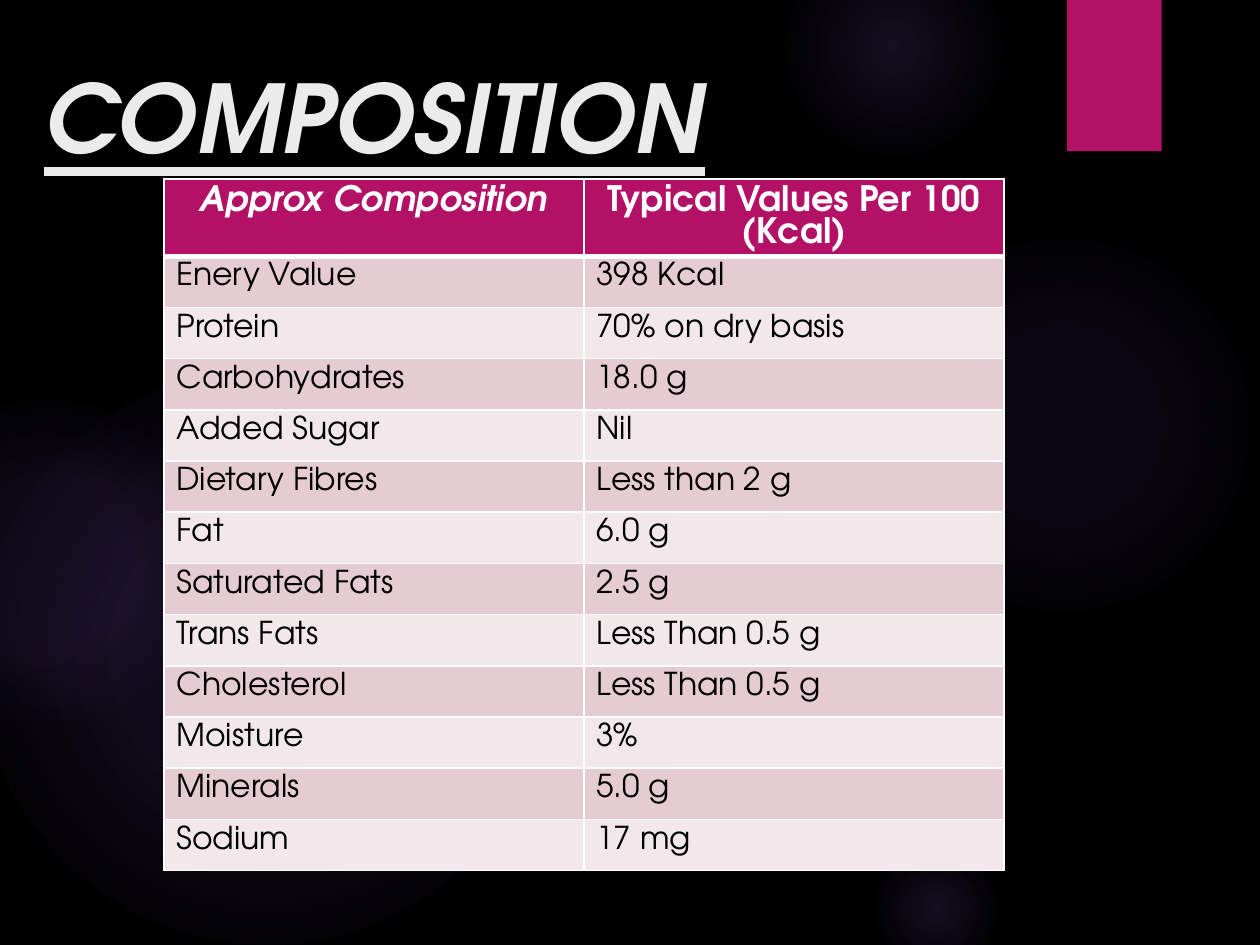
from dataclasses import dataclass

from lxml.etree import SubElement
from pptx import Presentation
from pptx.dml.color import RGBColor
from pptx.enum.shapes import MSO_SHAPE
from pptx.enum.text import MSO_ANCHOR, PP_ALIGN
from pptx.oxml import parse_xml
from pptx.oxml.ns import nsdecls, qn
from pptx.util import Inches, Pt


@dataclass(frozen=True)
class Theme:
    font: str = "TeX Gyre Adventor"
    back: str = "000000"
    glow: str = "9B6BF2"
    accent: str = "B31166"
    title: str = "EBEBEB"
    head: str = "FFFFFF"
    body: str = "000000"
    rule: str = "FFFFFF"
    bands: tuple = ("E5CCD3", "F2E7EA")
    title_size: int = 54
    head_size: int = 20
    body_size: int = 18


THEME = Theme()
WIDTH, HEIGHT = Inches(10), Inches(7.5)
COLS, ROWS = 100, 75

GLOWS = [
    ((68.9, 18.3, 30.8, 30.8), ((0, 7), (36, 6), (69, 0))),
    ((62.2, -5, 17.5, 17.5), ((0, 14), (36, 7), (73, 0))),
    ((68.9, 66.7, 10.8, 10.8), ((0, 14), (36, 7), (66, 0))),
    ((-1.7, 29.2, 45.8, 45.8), ((0, 11), (36, 10), (75, 0))),
    ((-9.2, 31.7, 25.8, 25.8), ((0, 8), (36, 8), (72, 0))),
]
HEADS = [("Approx Composition", True), ("Typical Values Per 100 (Kcal)", False)]
FACTS = [
    ("Enery Value", "398 Kcal"),
    ("Protein", "70% on dry basis"),
    ("Carbohydrates", "18.0 g"),
    ("Added Sugar", "Nil"),
    ("Dietary Fibres", "Less than 2 g"),
    ("Fat", "6.0 g"),
    ("Saturated Fats", "2.5 g"),
    ("Trans Fats", "Less Than 0.5 g"),
    ("Cholesterol", "Less Than 0.5 g"),
    ("Moisture", "3%"),
    ("Minerals", "5.0 g"),
    ("Sodium", "17 mg"),
]


def place(box):
    x, y, w, h = box
    return (int(WIDTH * x / COLS), int(HEIGHT * y / ROWS),
            int(WIDTH * w / COLS), int(HEIGHT * h / ROWS))


def paint(fill, color):
    fill.solid()
    fill.fore_color.rgb = RGBColor.from_string(color)


def write(frame, text, size, color, **style):
    para = frame.paragraphs[0]
    run = para.add_run()
    run.text = text
    run.font.color.rgb = RGBColor.from_string(color)
    for name, value in {"name": THEME.font, "size": Pt(size), **style}.items():
        setattr(run.font, name, value)
    return para


def add_shape(slide, kind, box):
    shape = slide.shapes.add_shape(kind, *place(box))
    shape.shadow.inherit = False
    shape.line.fill.background()
    return shape


def add_glow(slide, box, stops):
    shape = add_shape(slide, MSO_SHAPE.OVAL, box)
    shape.fill.background()
    marks = "".join(
        f'<a:gs pos="{pos * 1000}"><a:srgbClr val="{THEME.glow}">'
        f'<a:alpha val="{alpha * 1000}"/></a:srgbClr></a:gs>'
        for pos, alpha in stops)
    fade = parse_xml(
        f'<a:gradFill {nsdecls("a")} rotWithShape="1"><a:gsLst>{marks}</a:gsLst>'
        '<a:path path="circle"><a:fillToRect l="50000" t="50000" '
        'r="50000" b="50000"/></a:path></a:gradFill>')
    props = shape._element.spPr
    props.replace(props.find(qn("a:noFill")), fade)


def add_back(slide):
    paint(slide.background.fill, THEME.back)
    for box, stops in GLOWS:
        add_glow(slide, box, stops)
    tab = add_shape(slide, MSO_SHAPE.RECTANGLE, (84.7, 0, 7.5, 12))
    paint(tab.fill, THEME.accent)


def add_title(slide, box):
    title = slide.shapes.title
    title.left, title.top, title.width, title.height = place(box)
    frame = title.text_frame
    format = {"word_wrap": True, "vertical_anchor": MSO_ANCHOR.TOP,
              "margin_top": Inches(0.25)}
    for name, value in format.items():
        setattr(frame, name, value)
    para = write(frame, "COMPOSITION", THEME.title_size, THEME.title,
                 bold=True, italic=True, underline=True)
    para.alignment = PP_ALIGN.LEFT
    slide.shapes._spTree.append(title._element)


def add_rules(cell, widths):
    props = cell._tc.get_or_add_tcPr()
    for spot, (side, width) in enumerate(widths.items()):
        line = SubElement(props, qn(f"a:ln{side}"), w=str(Pt(width)))
        fill = SubElement(line, qn("a:solidFill"))
        SubElement(fill, qn("a:srgbClr"), val=THEME.rule)
        props.insert(spot, line)


def add_facts(slide, box, top):
    x, y, w, h = place(box)
    table = slide.shapes.add_table(len(FACTS) + 1, 2, x, y, w, h).table
    head = int(h * top)
    for col in table.columns:
        col.width = w // 2
    for spot, row in enumerate(table.rows):
        row.height = (h - head) // len(FACTS) if spot else head
    for col, (text, slant) in enumerate(HEADS):
        cell = table.cell(0, col)
        paint(cell.fill, THEME.accent)
        para = write(cell.text_frame, text, THEME.head_size, THEME.head,
                     bold=True, italic=slant)
        para.alignment = PP_ALIGN.CENTER
        add_rules(cell, {"L": 1, "R": 1, "T": 1, "B": 3})
    for row, fact in enumerate(FACTS, 1):
        for col, text in enumerate(fact):
            cell = table.cell(row, col)
            paint(cell.fill, THEME.bands[(row - 1) % 2])
            write(cell.text_frame, text, THEME.body_size, THEME.body, bold=False)
            add_rules(cell, {"L": 1, "R": 1, "T": 3 if row == 1 else 1, "B": 1})


def main():
    deck = Presentation()
    deck.slide_width, deck.slide_height = WIDTH, HEIGHT
    slide = deck.slides.add_slide(deck.slide_layouts[5])
    add_back(slide)
    add_title(slide, (2.5, 2.2, 77.2, 15.3))
    add_facts(slide, (13, 14.2, 66.7, 54.8), 0.11)
    deck.save("out.pptx")


if __name__ == "__main__":
    main()
